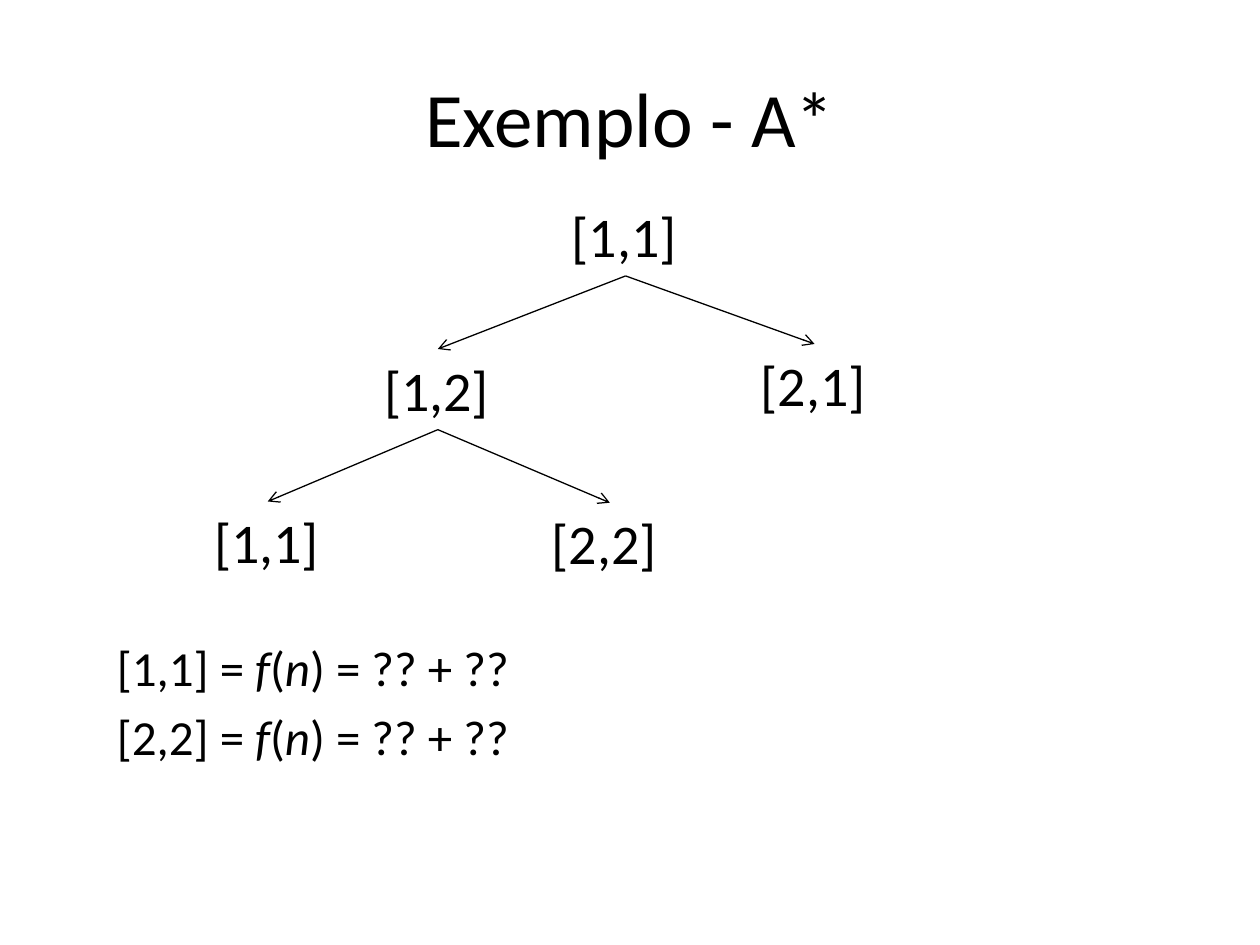
from lxml import etree
from pptx import Presentation
from pptx import util as u
from pptx.dml.color import RGBColor
from pptx.enum import shapes, text
from pptx.oxml import ns

BLACK = RGBColor(0, 0, 0)
FONT = "Calibri"
TITLE = "Exemplo - A*"
NODE_HEIGHT = 0.64

# Search tree: name -> (label, left, top, width, wraps)
NODES = {
    "root": ("[1,1]", 4.44, 1.55, 1.05, False),
    "right": ("[1,2]", 2.95, 2.77, 1.05, False),
    "down": ("[2,1]", 5.94, 2.73, 1.05, False),
    "back": ("[1,1]", 1.6, 3.98, 1.05, False),
    "corner": ("[2,2]", 4.28, 3.99, 1.12, True),
}
EDGES = [("root", "right"), ("root", "down"), ("right", "back"), ("right", "corner")]
COSTS = ["[1,1]", "[2,2]"]


def add_text(para, content, size, italic=False):
    span = para.add_run()
    span.text = content
    span.font.name = FONT
    span.font.size = u.Pt(size)
    span.font.italic = italic
    span.font.color.rgb = BLACK


def add_box(page, left, top, width, height, wrap=True):
    box = page.shapes.add_textbox(*map(u.Inches, (left, top, width, height)))
    box.text_frame.word_wrap = wrap
    return box.text_frame


def add_arrow(page, start, end):
    arrow = page.shapes.add_connector(
        shapes.MSO_CONNECTOR.STRAIGHT, *map(u.Inches, start + end))
    arrow.line.color.rgb = BLACK
    arrow.line.width = u.Pt(0.75)
    etree.SubElement(arrow.line._get_or_add_ln(), ns.qn("a:tailEnd"), type="arrow")
    etree.SubElement(arrow._element.spPr, ns.qn("a:effectLst"))


def main():
    deck = Presentation()
    deck.slide_width, deck.slide_height = u.Inches(10), u.Inches(7.5)
    page = deck.slides.add_slide(deck.slide_layouts.get_by_name("Title Only"))

    # Title
    title = page.shapes.title
    title.left, title.top, title.width, title.height = map(u.Inches, (0.5, 0.3, 9, 1.25))
    title.text_frame.vertical_anchor = text.MSO_ANCHOR.MIDDLE
    para = title.text_frame.paragraphs[0]
    para.alignment = text.PP_ALIGN.CENTER
    add_text(para, TITLE, 44)

    # Tree nodes
    for label, left, top, width, wrap in NODES.values():
        frame = add_box(page, left, top, width, NODE_HEIGHT, wrap)
        frame.auto_size = text.MSO_AUTO_SIZE.SHAPE_TO_FIT_TEXT
        add_text(frame.paragraphs[0], label, 32)

    # Arrows from the bottom centre of a parent to the top centre of a child
    for parent, child in EDGES:
        _, left, top, width, _ = NODES[parent]
        start = (left + width / 2, top + NODE_HEIGHT)
        _, left, top, width, _ = NODES[child]
        add_arrow(page, start, (left + width / 2, top))

    # Cost of each open node
    frame = add_box(page, 0.83, 5.01, 8.27, 1.42)
    for index, label in enumerate(COSTS):
        para = frame.add_paragraph() if index else frame.paragraphs[0]
        if index:
            para.space_before = u.Pt(5.6)
        for content, italic in [(label + " = ", False), ("f", True), ("(", False),
                                ("n", True), (") = ?? + ??", False)]:
            add_text(para, content, 28, italic=italic)

    deck.save("out.pptx")


if __name__ == "__main__":
    main()
